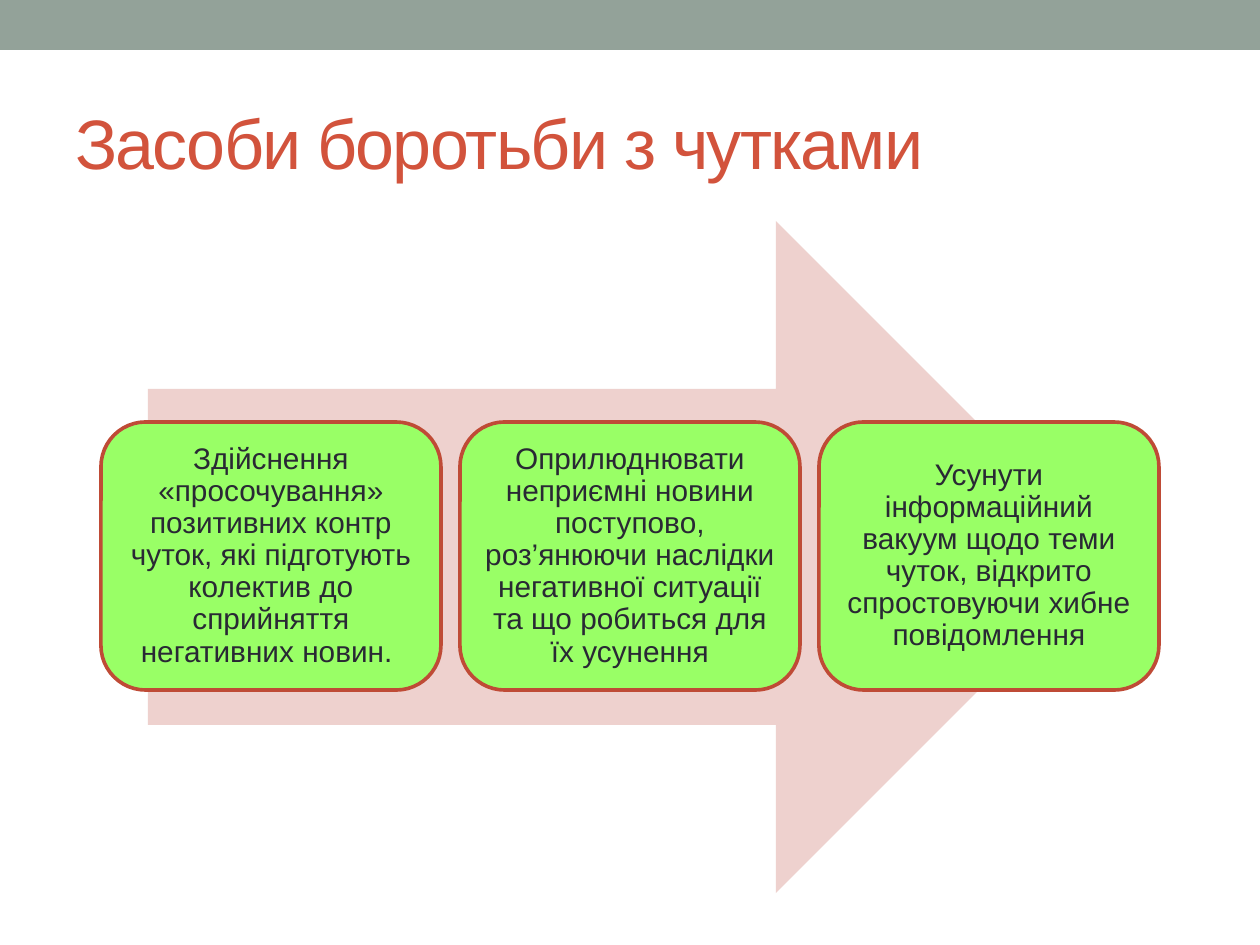
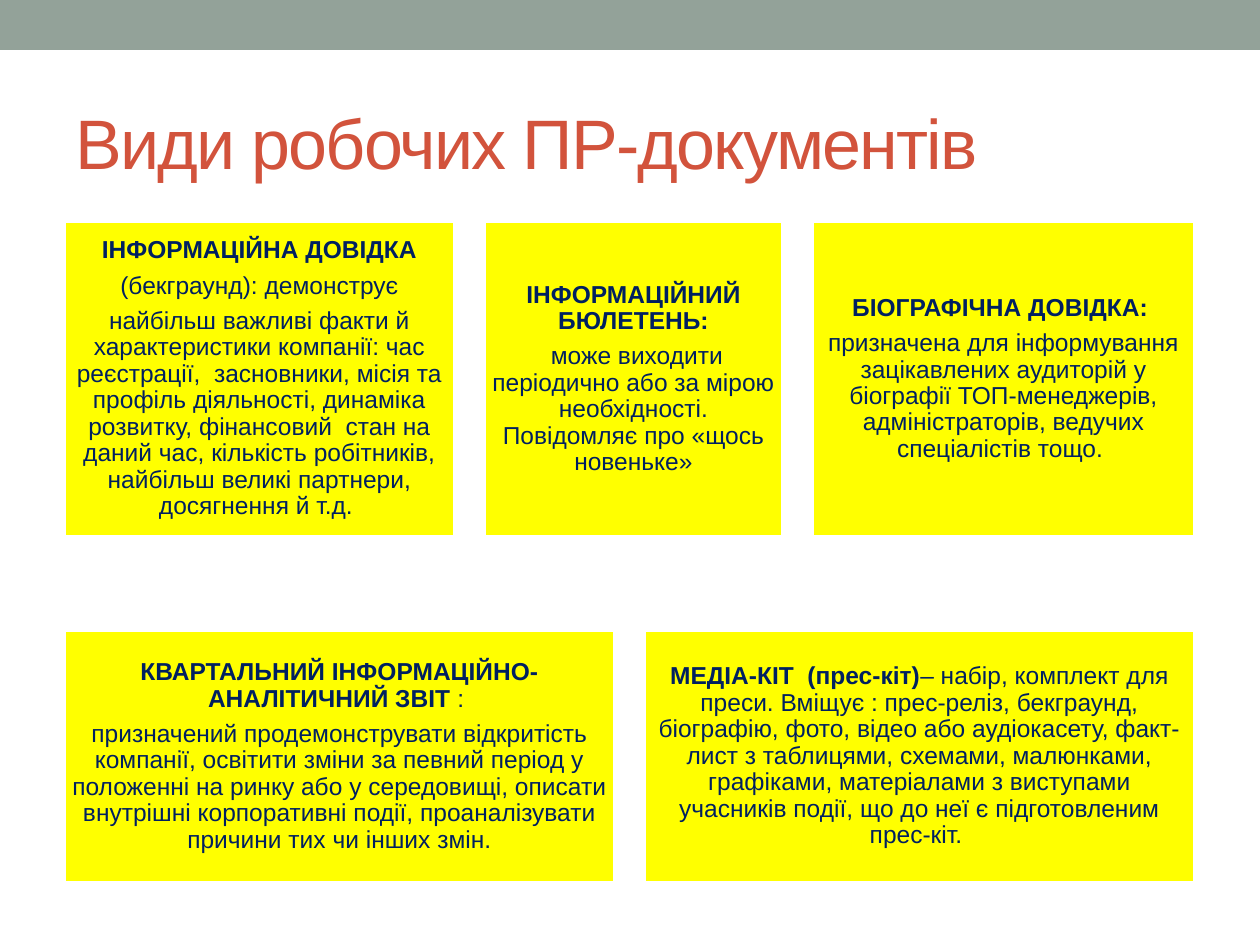
from dataclasses import dataclass

import pptx
import pptx.dml.color
import pptx.enum.shapes
import pptx.enum.text
import pptx.util

RGBColor = pptx.dml.color.RGBColor
Preset = pptx.enum.shapes.MSO_SHAPE
Align = pptx.enum.text.PP_ALIGN
Anchor = pptx.enum.text.MSO_ANCHOR

PX_PER_INCH = 126
SLIDE_W, SLIDE_H = 1260, 945
FONT = "Arial"

SAGE = RGBColor(0x93, 0xA2, 0x99)
BRICK = RGBColor(0xD2, 0x53, 0x3C)
BLUSH = RGBColor(0xEE, 0xD1, 0xCE)
LIME = RGBColor(0x99, 0xFF, 0x66)
RUST = RGBColor(0xBF, 0x4B, 0x36)
CHARCOAL = RGBColor(0x29, 0x29, 0x34)
YELLOW = RGBColor(0xFF, 0xFF, 0x00)
NAVY = RGBColor(0x00, 0x20, 0x60)
WHITE = RGBColor(0xFF, 0xFF, 0xFF)

# A paragraph is a list of (text, bold) runs.
Paragraph = list[tuple[str, bool]]


@dataclass(frozen=True)
class Area:
    left: int
    top: int
    width: int
    height: int


@dataclass(frozen=True)
class CardStyle:
    preset: int
    fill: RGBColor
    border: RGBColor
    ink: RGBColor
    size: int
    space_after: int
    inset: int


@dataclass(frozen=True)
class Card:
    width: int
    paragraphs: list[Paragraph]


MEASURE_STYLE = CardStyle(Preset.ROUNDED_RECTANGLE, LIME, RUST, CHARCOAL, 17, 6, 9)
DOCUMENT_STYLE = CardStyle(Preset.RECTANGLE, YELLOW, WHITE, NAVY, 14, 5, 7)

MEASURES = [
    "Здійснення «просочування» позитивних контр чуток, які підготують колектив "
    "до сприйняття негативних новин. ",
    "Оприлюднювати неприємні новини поступово, роз’янюючи наслідки негативної "
    "ситуації та що робиться для їх усунення",
    "Усунути інформаційний вакуум щодо теми чуток, відкрито спростовуючи хибне "
    "повідомлення",
]

REFERENCE_DOCUMENTS = [
    Card(391, [
        [("ІНФОРМАЦІЙНА ДОВІДКА", True)],
        [(" ", True), ("(бекграунд): демонструє ", False)],
        [("найбільш важливі факти й характеристики компанії: час реєстрації,  "
          "засновники, місія та профіль діяльності, динаміка розвитку, фінансовий  "
          "стан на даний час, кількість робітників, найбільш великі партнери, "
          "досягнення й т.д. ", False)],
    ]),
    Card(299, [
        [("ІНФОРМАЦІЙНИЙ БЮЛЕТЕНЬ:", True)],
        [(" ", True), ("може виходити періодично або за мірою необхідності. "
                       "Повідомляє про «щось новеньке»", False)],
    ]),
    Card(383, [
        [("БІОГРАФІЧНА ДОВІДКА: ", True)],
        [("призначена для інформування зацікавлених аудиторій у біографії "
          "ТОП-менеджерів, адміністраторів, ведучих спеціалістів тощо. ", False)],
    ]),
]

REPORT_DOCUMENTS = [
    Card(551, [
        [("КВАРТАЛЬНИЙ ІНФОРМАЦІЙНО-АНАЛІТИЧНИЙ ЗВІТ ", True), (": ", False)],
        [("призначений продемонструвати відкритість компанії, освітити зміни за "
          "певний період у положенні на ринку або у середовищі, описати внутрішні "
          "корпоративні події, проаналізувати причини тих чи інших змін.", False)],
    ]),
    Card(551, [
        [("МЕДІА-КІТ  (прес-кіт)", True),
         ("– набір, комплект для преси. Вміщує : прес-реліз, бекграунд, біографію, "
          "фото, відео або аудіокасету, факт-лист з таблицями, схемами, малюнками, "
          "графіками, матеріалами з виступами учасників події, що до неї є "
          "підготовленим прес-кіт. ", False)],
    ]),
]


def px(length: int) -> pptx.util.Emu:
    return pptx.util.Emu(round(length * 914400 / PX_PER_INCH))


def bounds(area: Area) -> list[pptx.util.Emu]:
    return [px(side) for side in (area.left, area.top, area.width, area.height)]


def add_filled_shape(slide, preset: int, area: Area, fill: RGBColor):
    shape = slide.shapes.add_shape(preset, *bounds(area))
    shape.shadow.inherit = False
    shape.fill.solid()
    shape.fill.fore_color.rgb = fill
    shape.line.fill.background()
    return shape


def add_titled_slide(deck, title: str):
    slide = deck.slides.add_slide(deck.slide_layouts[6])
    add_filled_shape(slide, Preset.RECTANGLE, Area(0, 0, SLIDE_W, 50), SAGE)
    frame = slide.shapes.add_textbox(*bounds(Area(63, 73, 1134, 136))).text_frame
    frame.word_wrap = True
    frame.vertical_anchor = Anchor.MIDDLE
    heading = frame.paragraphs[0]
    run = heading.add_run()
    run.text = title
    run.font.name = FONT
    run.font.size = pptx.util.Pt(40)
    run.font.color.rgb = BRICK
    run.font._element.set("spc", "-100")
    return slide


def add_card(slide, area: Area, paragraphs: list[Paragraph], style: CardStyle) -> None:
    card = add_filled_shape(slide, style.preset, area, style.fill)
    card.line.color.rgb = style.border
    card.line.width = pptx.util.Pt(2.08)
    frame = card.text_frame
    frame.word_wrap = True
    frame.vertical_anchor = Anchor.MIDDLE
    frame.margin_left = frame.margin_right = px(style.inset)
    frame.margin_top = frame.margin_bottom = px(style.inset)
    for index, runs in enumerate(paragraphs):
        paragraph = frame.add_paragraph() if index else frame.paragraphs[0]
        paragraph.alignment = Align.CENTER
        paragraph.line_spacing = 0.9
        paragraph.space_after = pptx.util.Pt(style.space_after)
        paragraph.font.name = FONT
        paragraph.font.size = pptx.util.Pt(style.size)
        paragraph.font.color.rgb = style.ink
        for text, bold in runs:
            run = paragraph.add_run()
            run.text = text
            run.font.bold = bold


def add_card_row(slide, left: int, top: int, height: int, gap: int,
                 cards: list[Card], style: CardStyle) -> None:
    for card in cards:
        add_card(slide, Area(left, top, card.width, height), card.paragraphs, style)
        left += card.width + gap


def build_rumour_slide(deck) -> None:
    slide = add_titled_slide(deck, "Засоби боротьби з чутками")
    add_filled_shape(slide, Preset.RIGHT_ARROW, Area(148, 221, 964, 672), BLUSH)
    cards = [Card(340, [[(measure, False)]]) for measure in MEASURES]
    add_card_row(slide, 101, 422, 268, 19, cards, MEASURE_STYLE)


def build_documents_slide(deck) -> None:
    slide = add_titled_slide(deck, "Види робочих ПР-документів")
    add_card_row(slide, 64, 221, 316, 29, REFERENCE_DOCUMENTS, DOCUMENT_STYLE)
    add_card_row(slide, 64, 630, 253, 29, REPORT_DOCUMENTS, DOCUMENT_STYLE)


def main() -> None:
    deck = pptx.Presentation()
    deck.slide_width, deck.slide_height = px(SLIDE_W), px(SLIDE_H)
    build_rumour_slide(deck)
    build_documents_slide(deck)
    deck.save("out.pptx")


if __name__ == "__main__":
    main()
